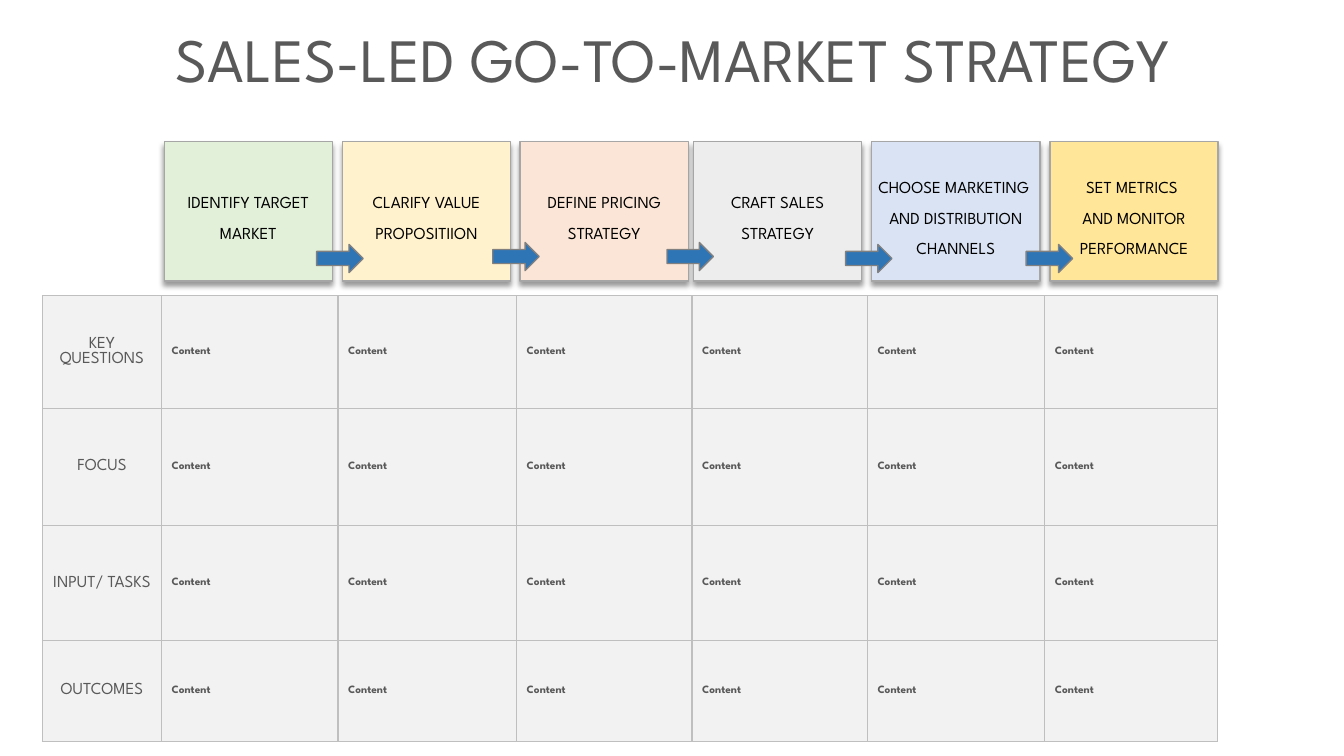
from dataclasses import dataclass

from lxml import etree
from pptx import Presentation
from pptx.dml.color import RGBColor
from pptx.enum.shapes import MSO_SHAPE
from pptx.enum.text import MSO_ANCHOR, MSO_AUTO_SIZE, PP_ALIGN
from pptx.oxml.ns import qn
from pptx.util import Cm, Pt

RECTANGLE, ARROW = MSO_SHAPE.RECTANGLE, MSO_SHAPE.RIGHT_ARROW
TOP, MIDDLE = MSO_ANCHOR.TOP, MSO_ANCHOR.MIDDLE
CENTER, LEFT = PP_ALIGN.CENTER, PP_ALIGN.LEFT
TITLE_ONLY = 5


@dataclass(frozen=True)
class Theme:
    font: str = "League Spartan"
    text: str = "595959"
    card_text: str = "000000"
    card_line: str = "A6A6A6"
    shadow: str = "000000"
    cell: str = "F2F2F2"
    grid: str = "BFBFBF"
    arrow: str = "2E75B6"
    arrow_line: str = "808080"
    title_size: int = 44
    label_size: int = 12
    content_size: int = 8


THEME = Theme()

# Stage name, card colour, left edge within the stage row (cm)
STAGES = [
    ("IDENTIFY TARGET MARKET", "E2F0D9", 0),
    ("CLARIFY VALUE PROPOSITIION", "FFF2CC", 4.49),
    ("DEFINE PRICING STRATEGY", "FBE5D6", 8.97),
    ("CRAFT SALES STRATEGY", "EDEDED", 13.34),
    ("CHOOSE MARKETING \vAND DISTRIBUTION CHANNELS", "DAE3F3", 17.83),
    ("SET METRICS \vAND MONITOR PERFORMANCE", "FFE699", 22.32),
]
# Arrow offsets from the top left of the stage row (cm)
ARROWS = [(3.84, 2.59), (8.28, 2.54), (12.67, 2.54), (17.17, 2.59), (21.72, 2.59)]
ROW_LABELS = ["KEY QUESTIONS", "FOCUS", "INPUT/ TASKS", "OUTCOMES"]
COLUMN_WIDTHS = [3.0, 4.45, 4.5, 4.42, 4.42, 4.47, 4.36]
ROW_HEIGHTS = [2.84, 2.95, 2.9, 2.54]


def write(frame, text, size, color, align, bold=False):
    frame.text = text
    paragraph = frame.paragraphs[0]
    paragraph.alignment = align
    for run in paragraph.runs:
        run.font.name = THEME.font
        run.font.size = Pt(size)
        run.font.bold = bold
        run.font.color.rgb = RGBColor.from_string(color)
    return paragraph


def add_block(slide, preset, box, fill, line):
    block = slide.shapes.add_shape(preset, *(Cm(length) for length in box))
    block.shadow.inherit = False
    block.fill.solid()
    block.fill.fore_color.rgb = RGBColor.from_string(fill)
    block.line.color.rgb = RGBColor.from_string(line)
    block.line.width = Pt(1)
    return block


def cast_shadow(block):
    effects = block._element.spPr.find(qn("a:effectLst"))
    shadow = etree.SubElement(
        effects, qn("a:outerShdw"), blurRad=str(Pt(4)), dist=str(Pt(3)),
        dir="5400000", algn="t", rotWithShape="0")
    color = etree.SubElement(shadow, qn("a:srgbClr"), val=THEME.shadow)
    etree.SubElement(color, qn("a:alpha"), val="40000")


def draw_cell_borders(cell):
    properties = cell._tc.get_or_add_tcPr()
    for index, side in enumerate(("lnL", "lnR", "lnT", "lnB")):
        border = etree.Element(qn(f"a:{side}"), w=str(Pt(1)))
        fill = etree.SubElement(border, qn("a:solidFill"))
        etree.SubElement(fill, qn("a:srgbClr"), val=THEME.grid)
        properties.insert(index, border)


# Heading
def place_heading(slide, left, top, width, height):
    heading = slide.shapes.title
    heading.left, heading.top = Cm(left), Cm(top)
    heading.width, heading.height = Cm(width), Cm(height)
    frame = heading.text_frame
    frame.word_wrap = True
    frame.auto_size = MSO_AUTO_SIZE.NONE
    frame.vertical_anchor = TOP
    write(frame, "SALES-LED GO-TO-MARKET STRATEGY",
          THEME.title_size, THEME.text, CENTER)


# Stage cards
def place_stages(slide, left, top, width, height):
    for name, fill, offset in STAGES:
        card = add_block(slide, RECTANGLE, (left + offset, top, width, height),
                         fill, THEME.card_line)
        cast_shadow(card)
        frame = card.text_frame
        frame.word_wrap = True
        frame.vertical_anchor = MIDDLE
        frame.margin_left = frame.margin_right = frame.margin_bottom = Cm(0.05)
        frame.margin_top = Cm(0.1)
        paragraph = write(frame, name, THEME.label_size, THEME.card_text, CENTER)
        paragraph.line_spacing = 1.5


# Planning grid
def place_grid(slide, left, top, width, height):
    grid = slide.shapes.add_table(
        len(ROW_HEIGHTS), len(COLUMN_WIDTHS),
        Cm(left), Cm(top), Cm(width), Cm(height)).table
    grid.first_row = grid.horz_banding = False
    for column, column_width in zip(grid.columns, COLUMN_WIDTHS):
        column.width = Cm(column_width)
    for row, row_height, label in zip(grid.rows, ROW_HEIGHTS, ROW_LABELS):
        row.height = Cm(row_height)
        for index, cell in enumerate(row.cells):
            cell.vertical_anchor = MIDDLE
            cell.fill.solid()
            cell.fill.fore_color.rgb = RGBColor.from_string(THEME.cell)
            draw_cell_borders(cell)
            if index == 0:
                write(cell.text_frame, label, THEME.label_size, THEME.text, CENTER)
            else:
                write(cell.text_frame, "Content", THEME.content_size,
                      THEME.text, LEFT, bold=True)


# Arrows between stages
def place_arrows(slide, left, top, width, height):
    for across, down in ARROWS:
        add_block(slide, ARROW, (left + across, top + down, width, height),
                  THEME.arrow, THEME.arrow_line)


def main():
    deck = Presentation()
    deck.slide_width, deck.slide_height = Cm(33.87), Cm(19.05)
    slide = deck.slides.add_slide(deck.slide_layouts[TITLE_ONLY])
    place_heading(slide, 0.41, 0.41, 33.12, 2.13)
    place_stages(slide, 4.14, 3.57, 4.24, 3.51)
    place_grid(slide, 1.07, 7.45, sum(COLUMN_WIDTHS), sum(ROW_HEIGHTS))
    place_arrows(slide, 4.14, 3.57, 1.17, 0.71)
    deck.save("out.pptx")


if __name__ == "__main__":
    main()
